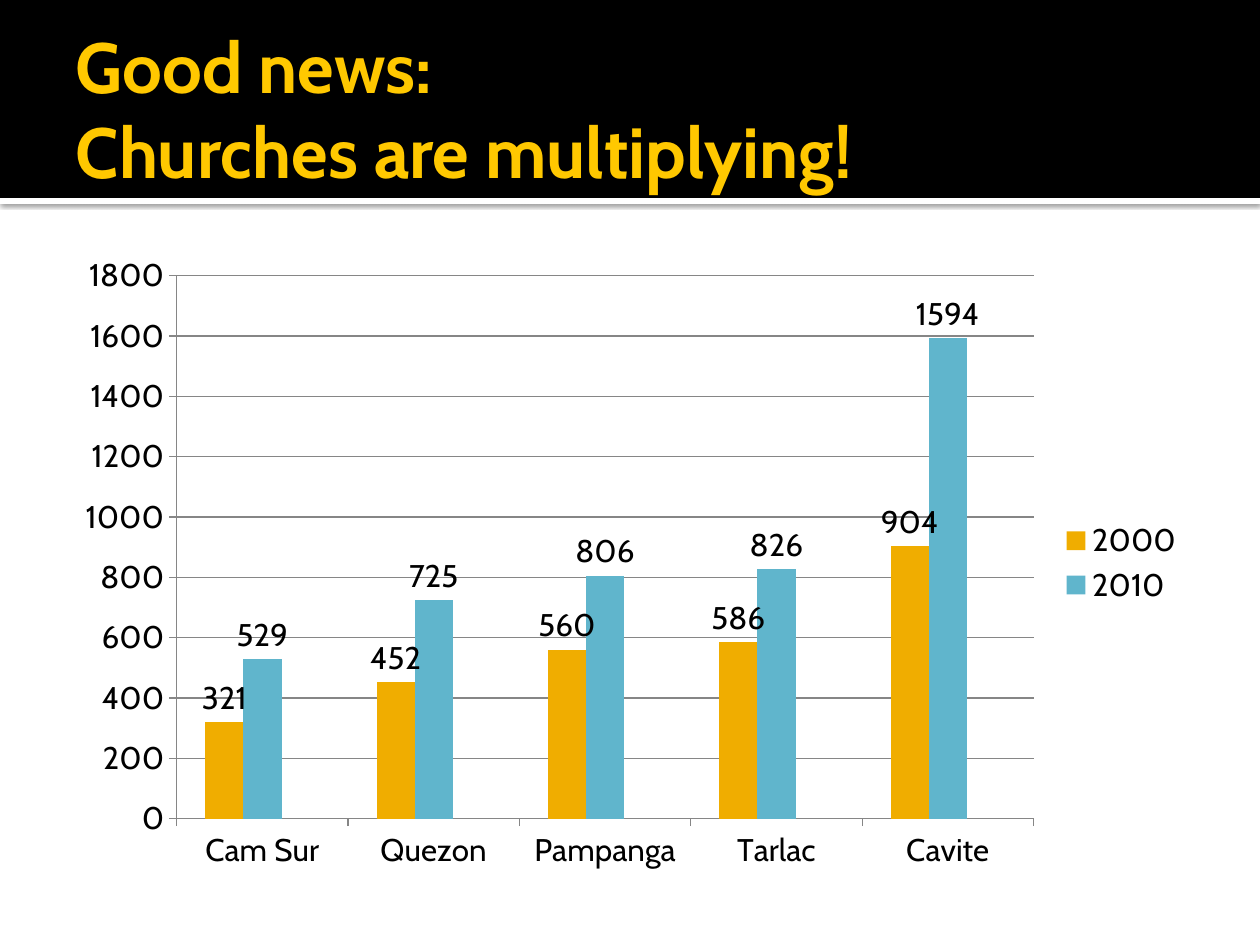
from lxml import etree
from pptx import Presentation
from pptx.chart.data import CategoryChartData as Data
from pptx.dml.color import RGBColor as RGB
from pptx.enum.chart import XL_CHART_TYPE as Kind
from pptx.enum.chart import XL_LABEL_POSITION as Spot
from pptx.enum.chart import XL_LEGEND_POSITION as Side
from pptx.enum.chart import XL_TICK_MARK as Tick
from pptx.enum.shapes import MSO_SHAPE as Form
from pptx.enum.text import MSO_ANCHOR as Anchor
from pptx.oxml import parse_xml
from pptx.oxml.ns import nsdecls, qn
from pptx.util import Emu, Pt

SCALE = 914400 / 126
COLORS = {
    "black": "000000", "white": "FFFFFF", "title": "FFC800", "grid": "868686",
    "2000": "F0AD00", "2010": "60B5CC", "Series 3": "E66C7D",
}
AREAS = ["Cam Sur", "Quezon", "Pampanga", "Tarlac", "Cavite"]
COUNTS = {
    "2000": [321, 452, 560, 586, 904],
    "2010": [529, 725, 806, 826, 1594],
    "Series 3": [None] * len(AREAS),
}


def px(*sizes):
    return [Emu(round(size * SCALE)) for size in sizes]


def paint(fill, name):
    fill.solid()
    fill.fore_color.rgb = RGB.from_string(COLORS[name])


class Deck:
    font = "Cabin"

    def __init__(self, wide, high):
        self.prs = Presentation()
        self.prs.slide_width, self.prs.slide_height = px(wide, high)
        self.slide = self.prs.slides.add_slide(self.prs.slide_layouts[6])

    def style(self, font, size, color, bold=False):
        font.name, font.size, font.bold = self.font, Pt(size), bold
        font.color.rgb = RGB.from_string(COLORS[color])

    def band(self, box, color):
        shape = self.slide.shapes.add_shape(Form.RECTANGLE, *px(*box))
        shape.shadow.inherit = False
        paint(shape.fill, color)
        shape.line.fill.background()
        return shape

    def shade(self, shape):
        """Give the shape a soft shadow straight below it."""
        effects = shape.element.spPr.find(qn("a:effectLst"))
        effects.append(parse_xml(
            f'<a:outerShdw {nsdecls("a")} blurRad="{Pt(2.5)}" dist="{Pt(0.8)}" '
            'dir="5400000" algn="t" rotWithShape="0"><a:srgbClr val="000000">'
            '<a:alpha val="60000"/></a:srgbClr></a:outerShdw>'))

    def title(self, box, text):
        frame = self.slide.shapes.add_textbox(*px(*box)).text_frame
        frame.word_wrap = True
        frame.vertical_anchor = Anchor.MIDDLE
        (frame.margin_left, frame.margin_top,
         frame.margin_right, frame.margin_bottom) = px(13, 6, 6, 6)
        para = frame.paragraphs[0]
        para.text = text
        self.style(para.font, 40.5, "title", True)

    def chart(self, box, areas, counts):
        data = Data()
        data.categories = areas
        for name, values in counts.items():
            data.add_series(name, values)
        chart = self.slide.shapes.add_chart(
            Kind.COLUMN_CLUSTERED, *px(*box), data).chart
        chart.has_title = False
        self.style(chart.font, 17.9, "black")

        plot = chart.plots[0]
        plot.gap_width, plot.overlap = 150, 0
        plot.vary_by_categories = False
        for bars in plot.series:
            paint(bars.format.fill, bars.name)
            if any(bars.values):
                labels = bars.data_labels
                labels.show_value = True
                labels.position = Spot.OUTSIDE_END

        rows = chart.value_axis
        rows.has_major_gridlines = True
        rows.minimum_scale, rows.maximum_scale, rows.major_unit = 0, 1800, 200
        for axis in (chart.category_axis, rows):
            axis.major_tick_mark, axis.minor_tick_mark = Tick.OUTSIDE, Tick.NONE
        for part in (chart.category_axis, rows, rows.major_gridlines):
            part.format.line.width = Pt(0.75)
            paint(part.format.line.fill, "grid")
        self.legend(chart, 2)

    def legend(self, chart, hide):
        """Put the legend at the right, without the entry numbered hide."""
        chart.has_legend = True
        chart.legend.position = Side.RIGHT
        chart.legend.include_in_layout = False
        place = chart.element.find(".//" + qn("c:legendPos"))
        entry = etree.Element(qn("c:legendEntry"))
        etree.SubElement(entry, qn("c:idx"), val=str(hide))
        etree.SubElement(entry, qn("c:delete"), val="1")
        place.addnext(entry)


def main():
    deck = Deck(1260, 945)
    deck.shade(deck.band((0, 198, 1260, 6), "white"))
    deck.band((0, 0, 1260, 198), "black")
    deck.title((63, 21, 1134, 173), "Good news:\vChurches are multiplying!")
    deck.chart((63, 244, 1134, 638), AREAS, COUNTS)
    deck.prs.save("out.pptx")


if __name__ == "__main__":
    main()
